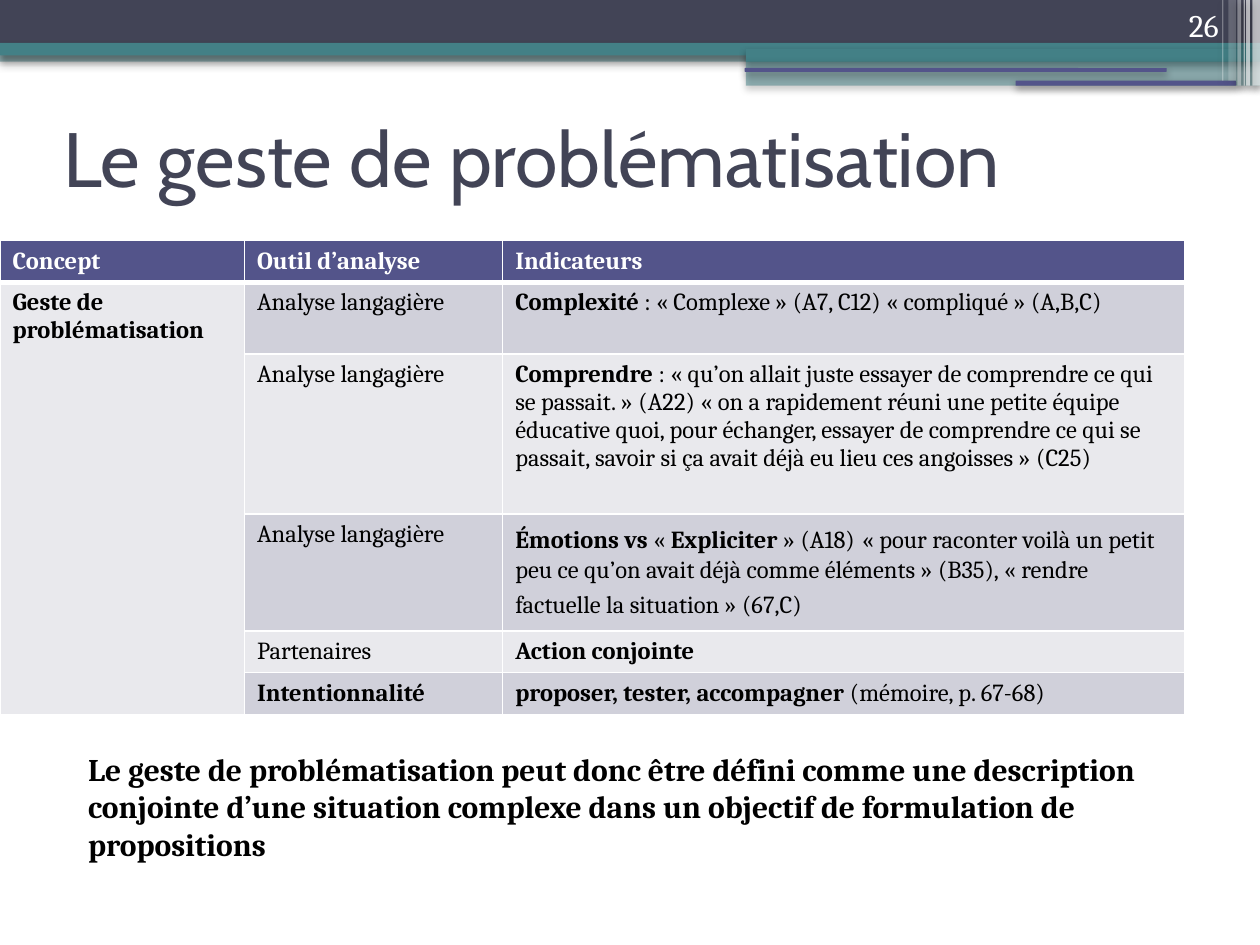
from lxml import etree
from pptx import Presentation
from pptx.dml.color import RGBColor
from pptx.enum import shapes, text
from pptx.oxml.ns import qn
from pptx.util import Inches, Pt

THEME = {
    "ink": "424456", "teal": "438086", "violet": "53548A", "white": "FFFFFF",
    "black": "000000", "pale": "E9E9ED", "band": "D0D0DA",
    "title_font": "Cabin", "body_font": "Cambria",
    "title": 44, "body": 18, "cell": 14, "small": 11,
    "thin": 0.96, "thick": 3,
}

TITLE = "Le geste de problématisation"
NUMBER = "26"
CONCLUSION = (
    "Le geste de problématisation peut donc être défini comme une description "
    "conjointe d’une situation complexe dans un objectif de formulation de propositions"
)

# Shape, left, top, width, height, colour, opacity in percent
BANNER = [
    ("RECTANGLE", 0, 0.4, 10, 0.09, "teal", 50),
    ("RECTANGLE", 0, 0, 10, 0.34, "ink", 100),
    ("RECTANGLE", 0, 0.34, 10, 0.1, "teal", 100),
    ("RECTANGLE", 5.92, 0.39, 4.08, 0.1, "teal", 100),
    ("RECTANGLE", 5.92, 0.48, 4.08, 0.2, "teal", 50),
    ("ROUNDED_RECTANGLE", 5.91, 0.54, 3.35, 0.03, "violet", 100),
    ("ROUNDED_RECTANGLE", 8.06, 0.64, 1.75, 0.04, "violet", 100),
]
# Left, width, height, opacity in percent
STRIPES = [
    (9.94, 0.06, 0.68, 66), (9.89, 0.03, 0.68, 66), (9.87, 0.01, 0.68, 60),
    (9.82, 0.03, 0.68, 40), (9.75, 0.06, 0.64, 20), (9.7, 0.01, 0.64, 31),
]

COLUMN_WIDTHS = [1.94, 2.05, 5.41]
ROW_HEIGHTS = [0.33, 0.57, 1.27, 0.93, 0.33, 0.33]
# A cell is a list of runs: words, bold, and a size name if not "cell"
LANGUAGE = [("Analyse langagière", False)]
ROWS = [
    [[("Concept", True)], [("Outil d’analyse", True)], [("Indicateurs", True)]],
    [
        [("Geste de problématisation", True)],
        LANGUAGE,
        [("Complexité ", True),
         (": « Complexe » (A7, C12) « compliqué » (A,B,C)", False)],
    ],
    [
        [],
        LANGUAGE,
        [("Comprendre ", True),
         (": « qu’on allait juste essayer de comprendre ce qui se passait. » (A22) "
          "« on a rapidement réuni une petite équipe éducative quoi, pour échanger, "
          "essayer de comprendre ce qui se passait, savoir si ça avait déjà eu lieu "
          "ces angoisses » (C25)", False)],
    ],
    [
        [],
        LANGUAGE,
        [("Émotions vs ", True), ("« ", False), ("Expliciter", True),
         (" » (A18)", False), (" ", False, "body"),
         ("« pour raconter voilà un petit peu ce qu’on avait déjà comme éléments » (B35),",
          False),
         (" ", False, "small"), ("« rendre factuelle la situation » (67,C)", False),
         (" ", False, "body")],
    ],
    [[], [("Partenaires", False)], [("Action conjointe", True)]],
    [
        [],
        [("Intentionnalité", True)],
        [("proposer, tester, accompagner ", True), ("(mémoire, p. 67-68)", False)],
    ],
]


def color(name):
    return RGBColor.from_string(THEME[name])


def add_run(paragraph, words, size, ink, bold=False, font="body_font"):
    run = paragraph.add_run()
    run.text = words
    run.font.name = THEME[font]
    run.font.size = Pt(THEME[size])
    run.font.bold = bold
    run.font.color.rgb = color(ink)


def add_block(slide, kind, left, top, width, height, fill, opacity):
    """Add a borderless banner shape with a soft shadow below it."""
    shape = slide.shapes.add_shape(
        getattr(shapes.MSO_SHAPE, kind),
        Inches(left), Inches(top), Inches(width), Inches(height))
    shape.fill.solid()
    shape.fill.fore_color.rgb = color(fill)
    shape.line.fill.background()
    shape.shadow.inherit = False
    properties = shape.element.spPr
    if opacity < 100:
        fill_color = properties.find(qn("a:solidFill"))[0]
        etree.SubElement(fill_color, qn("a:alpha"), val=str(opacity * 1000))
    shadow = etree.SubElement(
        properties.find(qn("a:effectLst")), qn("a:outerShdw"),
        blurRad=str(Pt(4.1)), dist=str(Pt(2)), dir="5400000",
        algn="t", rotWithShape="0")
    shadow_color = etree.SubElement(shadow, qn("a:srgbClr"), val=THEME["black"])
    etree.SubElement(shadow_color, qn("a:alpha"), val="40000")


def add_text(slide, box, words, ink, bold=False):
    frame = slide.shapes.add_textbox(*map(Inches, box)).text_frame
    frame.word_wrap = True
    add_run(frame.paragraphs[0], words, "body", ink, bold)
    return frame


def set_borders(cell, row):
    """Draw white cell borders, heavier between the header and the body."""
    weights = {
        "L": "thin", "R": "thin",
        "T": "thick" if row == 1 else "thin",
        "B": "thick" if row == 0 else "thin",
    }
    properties = cell._tc.get_or_add_tcPr()
    for side, weight in weights.items():
        line = etree.SubElement(
            properties, qn(f"a:ln{side}"), w=str(Pt(THEME[weight])))
        fill = etree.SubElement(line, qn("a:solidFill"))
        etree.SubElement(fill, qn("a:srgbClr"), val=THEME["white"])


def cell_fill(row, column):
    if row == 0:
        return "violet"
    return "band" if column and row % 2 else "pale"


def add_analysis_table(slide):
    table = slide.shapes.add_table(
        len(ROWS), len(COLUMN_WIDTHS), Inches(0), Inches(1.91),
        Inches(sum(COLUMN_WIDTHS)), Inches(sum(ROW_HEIGHTS))).table
    for column, width in zip(table.columns, COLUMN_WIDTHS):
        column.width = Inches(width)
    for row, height in zip(table.rows, ROW_HEIGHTS):
        row.height = Inches(height)
    table.cell(1, 0).merge(table.cell(len(ROWS) - 1, 0))
    for i, row in enumerate(ROWS):
        for j, runs in enumerate(row):
            cell = table.cell(i, j)
            set_borders(cell, i)
            cell.fill.solid()
            cell.fill.fore_color.rgb = color(cell_fill(i, j))
            for words, bold, *size in runs:
                add_run(cell.text_frame.paragraphs[0], words,
                        size[0] if size else "cell",
                        "black" if i else "white", bold)


def place_title(slide):
    title = slide.shapes.title
    title.left, title.top, title.width, title.height = map(Inches, (0.4, 0.57, 9, 1.35))
    frame = title.text_frame
    frame.auto_size = text.MSO_AUTO_SIZE.NONE
    frame.vertical_anchor = text.MSO_ANCHOR.MIDDLE
    paragraph = frame.paragraphs[0]
    paragraph.alignment = text.PP_ALIGN.LEFT
    add_run(paragraph, TITLE, "title", "ink", font="title_font")
    title.element.getparent().append(title.element)  # in front of the banner


def main():
    presentation = Presentation()
    presentation.slide_width, presentation.slide_height = Inches(10), Inches(7.5)
    slide = presentation.slides.add_slide(presentation.slide_layouts[5])
    for block in BANNER:
        add_block(slide, *block)
    for left, width, height, opacity in STRIPES:
        add_block(slide, "RECTANGLE", left, 0, width, height, "white", opacity)
    place_title(slide)
    add_analysis_table(slide)
    add_text(slide, (0.6, 5.9, 8.79, 1), CONCLUSION, "black", bold=True)
    number = add_text(slide, (8.94, 0, 0.83, 0.4), NUMBER, "white")
    number.vertical_anchor = text.MSO_ANCHOR.BOTTOM
    number.paragraphs[0].alignment = text.PP_ALIGN.RIGHT
    presentation.save("out.pptx")


if __name__ == "__main__":
    main()
